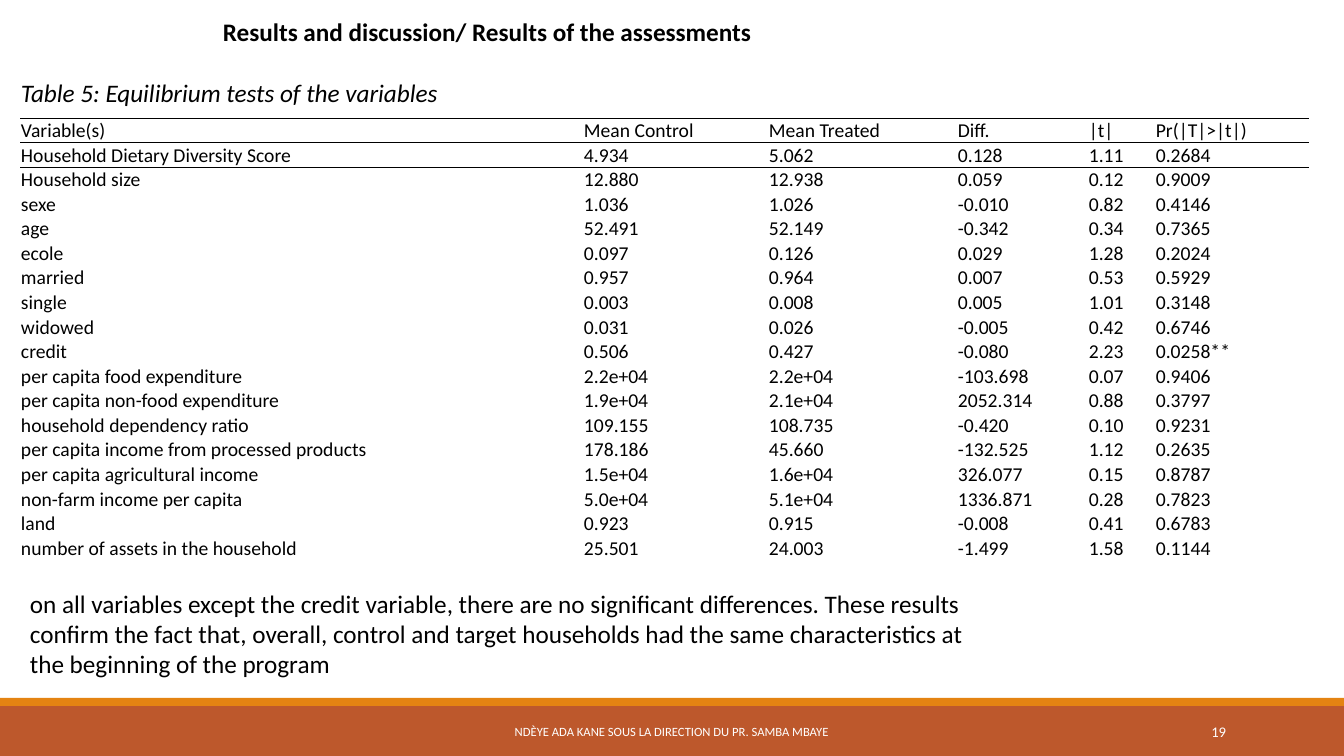
import dataclasses

import lxml.etree
import pptx
import pptx.dml.color
import pptx.enum.shapes
import pptx.enum.text
import pptx.oxml.ns
import pptx.util

ALIGN = pptx.enum.text.PP_ALIGN
ANCHOR = pptx.enum.text.MSO_ANCHOR
NO_GRID_STYLE = "{2D5ABB26-0587-4C30-8999-92F81FD0307C}"
WIDTH, HEIGHT = 1344, 756


@dataclasses.dataclass(frozen=True)
class Theme:
    font: str = "Calibri"
    ink: str = "000000"
    paper: str = "FFFFFF"
    bar: str = "BD582C"
    accent: str = "E48312"
    body: float = 18
    cell: float = 14
    number: float = 10.5
    footer: float = 9
    rule: float = 0.5


def px(n):
    return pptx.util.Emu(round(n * 12192000 / WIDTH))


def rgb(color):
    return pptx.dml.color.RGBColor.from_string(color)


class Deck:
    def __init__(self, theme):
        self.theme = theme
        self.prs = pptx.Presentation()
        self.prs.slide_width, self.prs.slide_height = px(WIDTH), px(HEIGHT)
        self.s = self.prs.slides.add_slide(self.prs.slide_layouts[6])

    def style(self, p, size, color, bold=False, italic=False):
        f = p.font
        f.name, f.size, f.color.rgb = self.theme.font, pptx.util.Pt(size), rgb(color)
        f.bold, f.italic = bold, italic

    def rect(self, box, color):
        sp = self.s.shapes.add_shape(
            pptx.enum.shapes.MSO_SHAPE.RECTANGLE, *map(px, box))
        sp.shadow.inherit = False
        sp.fill.solid()
        sp.fill.fore_color.rgb = rgb(color)
        sp.line.fill.background()

    def text(self, box, text, size, color, align=ALIGN.LEFT, anchor=ANCHOR.TOP, **emphasis):
        tf = self.s.shapes.add_textbox(*map(px, box)).text_frame
        tf.word_wrap = True
        tf.vertical_anchor = anchor
        p = tf.paragraphs[0]
        p.text, p.alignment = text, align
        self.style(p, size, color, **emphasis)

    def border(self, cell, side):
        qn = pptx.oxml.ns.qn
        ln = lxml.etree.SubElement(
            cell._tc.get_or_add_tcPr(), qn(f"a:ln{side}"),
            w=str(pptx.util.Pt(self.theme.rule)))
        fill = lxml.etree.SubElement(ln, qn("a:solidFill"))
        lxml.etree.SubElement(fill, qn("a:srgbClr"), val=self.theme.ink)

    def table(self, left, top, widths, height, rows):
        frame = self.s.shapes.add_table(
            len(rows), len(widths), *map(px, (left, top, sum(widths), height)))
        table = frame.table
        table.first_row = table.horz_banding = False
        table._tbl.tblPr.find(pptx.oxml.ns.qn("a:tableStyleId")).text = NO_GRID_STYLE
        for column, width in zip(table.columns, widths):
            column.width = px(width)
        for i, values in enumerate(rows):
            table.rows[i].height = px(height / len(rows))
            for j, value in enumerate(values):
                cell = table.cell(i, j)
                cell.margin_left = cell.margin_right = cell.margin_top = px(1)
                cell.margin_bottom = 0
                cell.vertical_anchor = ANCHOR.BOTTOM
                # Rules above and below the header row
                for side in {0: "TB", 1: "T"}.get(i, ""):
                    self.border(cell, side)
                cell.fill.solid()
                cell.fill.fore_color.rgb = rgb(self.theme.paper)
                p = cell.text_frame.paragraphs[0]
                p.text = value
                self.style(p, self.theme.cell, self.theme.ink)


BALANCE_TESTS = [
    ("Variable(s)", "Mean Control", "Mean Treated", "Diff.", "|t|", "Pr(|T|>|t|)"),
    ("Household Dietary Diversity Score", "4.934", "5.062", "0.128", "1.11", "0.2684"),
    ("Household size", "12.880", "12.938", "0.059", "0.12", "0.9009"),
    ("sexe", "1.036", "1.026", "-0.010", "0.82", "0.4146"),
    ("age", "52.491", "52.149", "-0.342", "0.34", "0.7365"),
    ("ecole", "0.097", "0.126", "0.029", "1.28", "0.2024"),
    ("married", "0.957", "0.964", "0.007", "0.53", "0.5929"),
    ("single", "0.003", "0.008", "0.005", "1.01", "0.3148"),
    ("widowed", "0.031", "0.026", "-0.005", "0.42", "0.6746"),
    ("credit", "0.506", "0.427", "-0.080", "2.23", "0.0258**"),
    ("per capita food expenditure", "2.2e+04", "2.2e+04", "-103.698", "0.07", "0.9406"),
    ("per capita non-food expenditure", "1.9e+04", "2.1e+04", "2052.314", "0.88", "0.3797"),
    ("household dependency ratio", "109.155", "108.735", "-0.420", "0.10", "0.9231"),
    ("per capita income from processed products",
     "178.186", "45.660", "-132.525", "1.12", "0.2635"),
    ("per capita agricultural income", "1.5e+04", "1.6e+04", "326.077", "0.15", "0.8787"),
    ("non-farm income per capita", "5.0e+04", "5.1e+04", "1336.871", "0.28", "0.7823"),
    ("land", "0.923", "0.915", "-0.008", "0.41", "0.6783"),
    ("number of assets in the household", "25.501", "24.003", "-1.499", "1.58", "0.1144"),
]


def main():
    theme = Theme()
    deck = Deck(theme)

    # Footer
    deck.rect((0, 706, WIDTH, 50), theme.bar)
    deck.rect((0, 698, WIDTH, 8), theme.accent)
    deck.text((406, 712, 531, 40), "NDÈYE ADA KANE SOUS LA DIRECTION DU PR. SAMBA MBAYE",
              theme.footer, theme.paper, ALIGN.CENTER, ANCHOR.MIDDLE)
    deck.text((1092, 712, 144, 40), "19", theme.number, theme.paper,
              ALIGN.RIGHT, ANCHOR.MIDDLE)

    # Title and table caption
    deck.text((213, 11, 711, 40), "Results and discussion/ Results of the assessments",
              theme.body, theme.ink, bold=True)
    deck.text((11, 72, 791, 40), "Table 5: Equilibrium tests of the variables",
              theme.body, theme.ink, italic=True)

    # Balance test table
    deck.table(20, 118, (563, 185, 189, 131, 67, 154), 436, BALANCE_TESTS)

    # Conclusion
    deck.text((20, 583, 991, 102),
              "on all variables except the credit variable, there are no significant "
              "differences. These results confirm the fact that, overall, control and "
              "target households had the same characteristics at the beginning of the program",
              theme.body, theme.ink)

    deck.prs.save("out.pptx")


if __name__ == "__main__":
    main()
